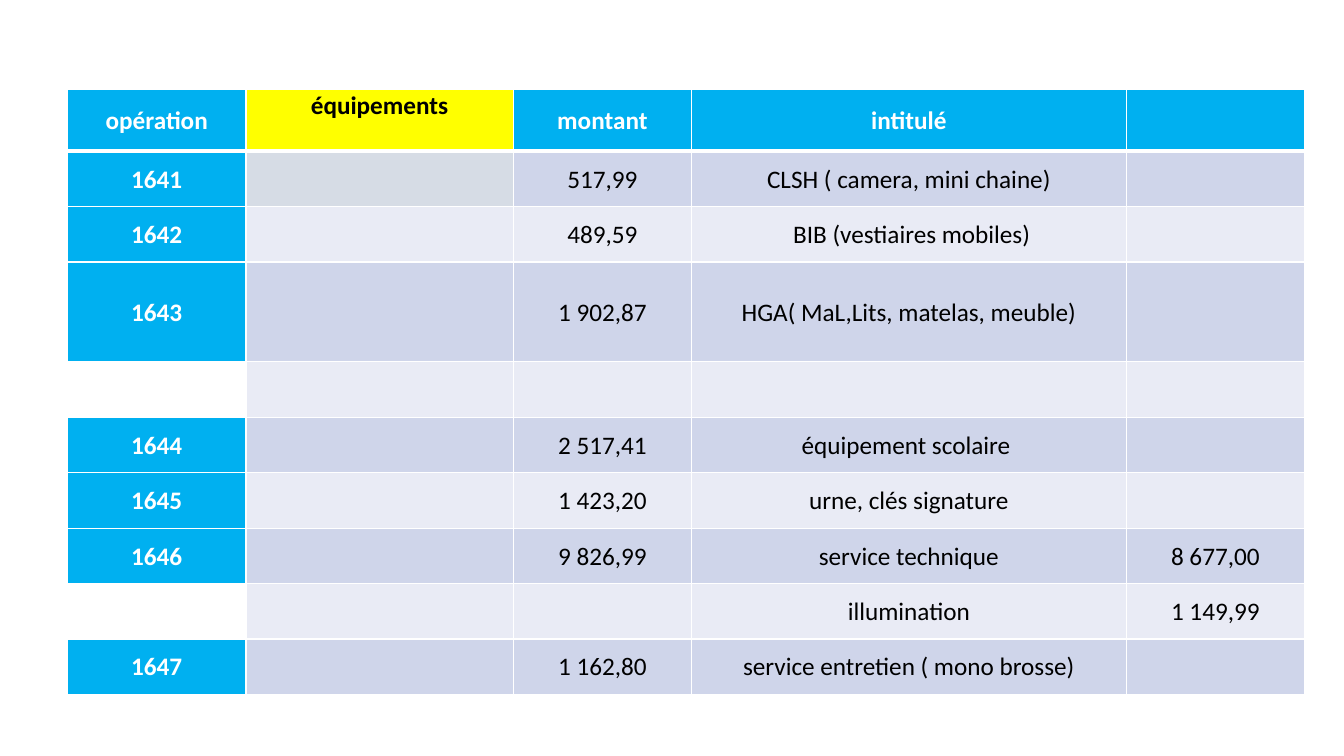
from lxml import etree
from pptx import Presentation
from pptx.dml.color import RGBColor
from pptx.enum.text import MSO_ANCHOR, PP_ALIGN
from pptx.oxml.ns import qn
from pptx.util import Inches, Pt

TOP, MIDDLE = MSO_ANCHOR.TOP, MSO_ANCHOR.MIDDLE
CENTER = PP_ALIGN.CENTER

# Content
ROWS = [
    ("opération", "équipements", "montant", "intitulé", ""),
    ("1641", "", "517,99", "CLSH ( camera, mini chaine)", ""),
    ("1642", "", "489,59", " BIB (vestiaires mobiles)", ""),
    ("1643", "", "1 902,87", "HGA( MaL,Lits, matelas, meuble)", ""),
    ("", "", "", "", ""),
    ("1644", "", "2 517,41", "équipement scolaire ", ""),
    ("1645", "", "1 423,20", "urne, clés signature", ""),
    ("1646", "", "9 826,99", "service technique", "8 677,00"),
    ("", "", "", "illumination", "1 149,99"),
    ("1647", "", "1 162,80", "service entretien ( mono brosse)", ""),
]
COLUMN_WIDTHS = [1.77, 2.65, 1.77, 4.31, 1.77]
ROW_HEIGHT = 0.55
SPECIAL_HEIGHTS = {0: 0.61, 3: 0.99}

BLUE, YELLOW, WHITE, BLACK = "00B0F0", "FFFF00", "FFFFFF", "000000"
BANDS = ["E9EBF5", "CFD5EA"]
SPECIAL_FILLS = {(0, 1): YELLOW, (1, 1): "D6DCE5"}


def color(code):
    return RGBColor.from_string(code)


def cell_fill(row, column, text):
    if (row, column) in SPECIAL_FILLS:
        return SPECIAL_FILLS[row, column]
    if row == 0:
        return BLUE
    if column == 0:
        return BLUE if text else None
    return BANDS[row % 2]


def add_borders(cell, row):
    properties = cell._tc.get_or_add_tcPr()
    widths = {"L": 1, "R": 1, "T": 3 if row == 1 else 1, "B": 3 if row == 0 else 1}
    for side, width in widths.items():
        line = etree.SubElement(properties, qn("a:ln" + side), w=str(Pt(width)))
        fill = etree.SubElement(line, qn("a:solidFill"))
        etree.SubElement(fill, qn("a:srgbClr"), val=WHITE)


def fill_cell(cell, row, column, text):
    add_borders(cell, row)
    fill = cell_fill(row, column, text)
    if fill:
        cell.fill.solid()
        cell.fill.fore_color.rgb = color(fill)
    else:
        cell.fill.background()
    cell.margin_left = cell.margin_right = cell.margin_top = Inches(0.01)
    cell.margin_bottom = 0
    cell.vertical_anchor = TOP if fill == YELLOW else MIDDLE
    if not text:
        return
    para = cell.text_frame.paragraphs[0]
    para.alignment = CENTER
    span = para.add_run()
    span.text = text
    span.font.name = "Calibri"
    span.font.size = Pt(18)
    span.font.bold = row == 0 or column == 0
    span.font.color.rgb = color(WHITE if fill == BLUE else BLACK)


deck = Presentation()
deck.slide_width, deck.slide_height = Inches(13.33), Inches(7.5)
page = deck.slides.add_slide(deck.slide_layouts[6])

# Table of equipment spending
heights = [SPECIAL_HEIGHTS.get(row, ROW_HEIGHT) for row in range(len(ROWS))]
frame = page.shapes.add_table(
    len(ROWS), len(COLUMN_WIDTHS), Inches(0.67), Inches(0.89),
    Inches(sum(COLUMN_WIDTHS)), Inches(sum(heights)))
table = frame.table
table.first_row = table.horz_banding = False
for column, width in zip(table.columns, COLUMN_WIDTHS):
    column.width = Inches(width)
for row, height in zip(table.rows, heights):
    row.height = Inches(height)

for row, texts in enumerate(ROWS):
    for column, text in enumerate(texts):
        fill_cell(table.cell(row, column), row, column, text)

deck.save("out.pptx")
